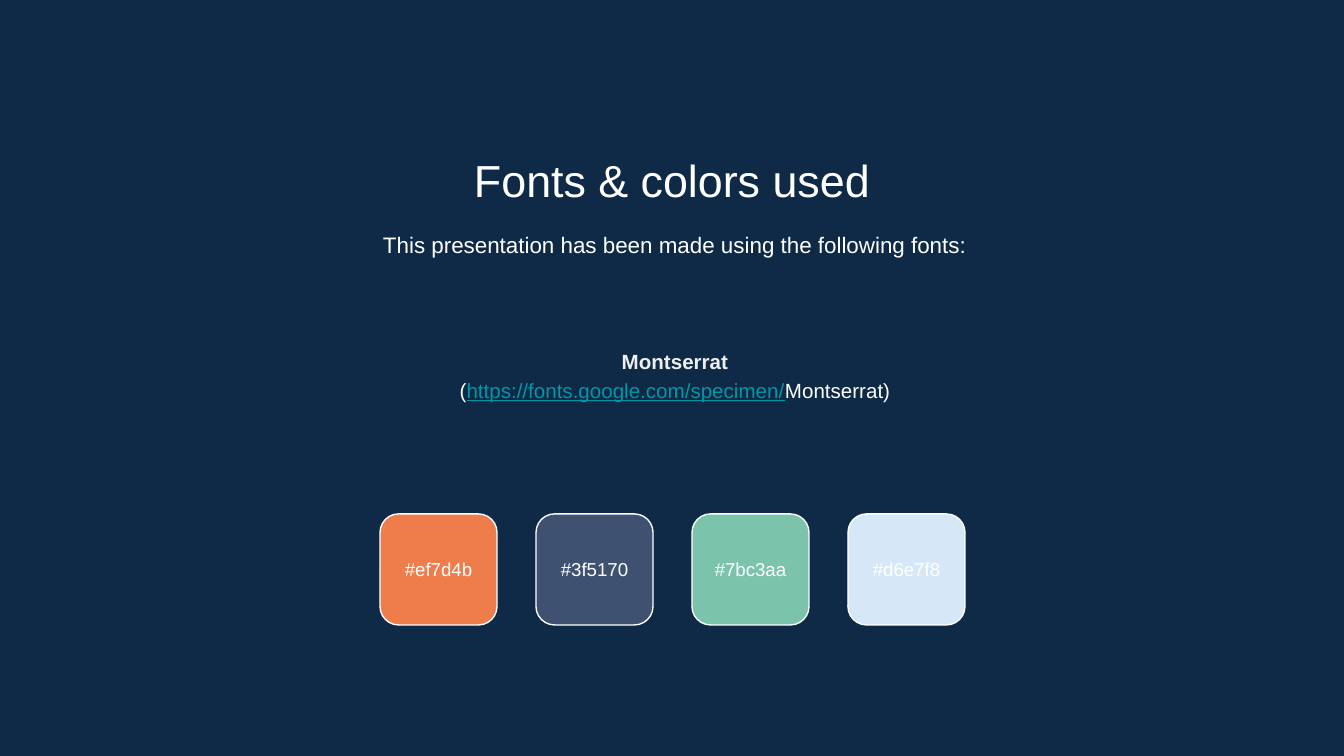
from pptx import Presentation
from pptx import util as u
from pptx.dml.color import RGBColor
from pptx.enum import shapes, text

SCALE = 914400 / 134.4
COLORS = {
    "background": "0E2A47",
    "white": "FFFFFF",
    "name": "EFEFEF",
    "link": "0097A7",
}
SWATCHES = ["#ef7d4b", "#3f5170", "#7bc3aa", "#d6e7f8"]


def px(n):
    return u.Emu(round(n * SCALE))


def rgb(value):
    return RGBColor.from_string(value.lstrip("#").upper())


class SlideBuilder:
    font = "Arial"
    inset = 13

    def __init__(self, prs):
        self.s = prs.slides.add_slide(prs.slide_layouts[5])
        fill = self.s.background.fill
        fill.solid()
        fill.fore_color.rgb = rgb(COLORS["background"])

    def frame(self, sp, anchor):
        tf = sp.text_frame
        tf.word_wrap = True
        tf.auto_size = text.MSO_AUTO_SIZE.NONE
        tf.vertical_anchor = anchor
        tf.margin_left = tf.margin_right = px(self.inset)
        tf.margin_top = tf.margin_bottom = px(self.inset)
        return tf

    def style(self, p, size, color="white", bold=False, spacing=1.0):
        p.alignment = text.PP_ALIGN.CENTER
        p.line_spacing = spacing
        p.font.name = self.font
        p.font.size = u.Pt(size)
        p.font.bold = bold
        p.font.color.rgb = rgb(COLORS[color])

    def title(self, words, x, y, w, h):
        sp = self.s.shapes.title
        sp.left, sp.top, sp.width, sp.height = map(px, (x, y, w, h))
        tf = self.frame(sp, text.MSO_ANCHOR.TOP)
        tf.text = words
        self.style(tf.paragraphs[0], 24)

    def textbox(self, x, y, w, h, anchor=text.MSO_ANCHOR.TOP):
        sp = self.s.shapes.add_textbox(*map(px, (x, y, w, h)))
        return self.frame(sp, anchor)

    def intro(self, words, x, y, w, h):
        p = self.textbox(x, y, w, h).paragraphs[0]
        p.text = words
        self.style(p, 12, spacing=1.15)

    def font_credit(self, name, url, x, y, w, h):
        tf = self.textbox(x, y, w, h, text.MSO_ANCHOR.MIDDLE)
        p = tf.paragraphs[0]
        p.text = name
        self.style(p, 11, "name", bold=True, spacing=1.15)
        p = tf.add_paragraph()
        self.style(p, 11, spacing=1.15)
        for words, color in (("(", "white"), (url, "link"), (f"{name})", "white")):
            r = p.add_run()
            r.text = words
            r.font.name = self.font
            r.font.size = u.Pt(11)
            r.font.color.rgb = rgb(COLORS[color])
            r.font.underline = color == "link"

    def swatch(self, code, x, y, w, h):
        sp = self.s.shapes.add_shape(
            shapes.MSO_SHAPE.ROUNDED_RECTANGLE, *map(px, (x, y, w, h))
        )
        sp.shadow.inherit = False
        sp.fill.solid()
        sp.fill.fore_color.rgb = rgb(code)
        sp.line.color.rgb = rgb(COLORS["white"])
        sp.line.width = u.Pt(0.75)
        p = self.frame(sp, text.MSO_ANCHOR.MIDDLE).paragraphs[0]
        p.text = code
        self.style(p, 10)


def main():
    prs = Presentation()
    prs.slide_width, prs.slide_height = px(1344), px(756)
    slide = SlideBuilder(prs)
    slide.title("Fonts & colors used", 154, 140, 1036, 72)
    slide.intro(
        "This presentation has been made using the following fonts:",
        157, 214, 1036, 64,
    )
    slide.font_credit(
        "Montserrat", "https://fonts.google.com/specimen/", 157, 282, 1036, 184
    )
    for i, code in enumerate(SWATCHES):
        slide.swatch(code, 380 + 156 * i, 514, 117, 111)
    prs.save("out.pptx")


if __name__ == "__main__":
    main()
